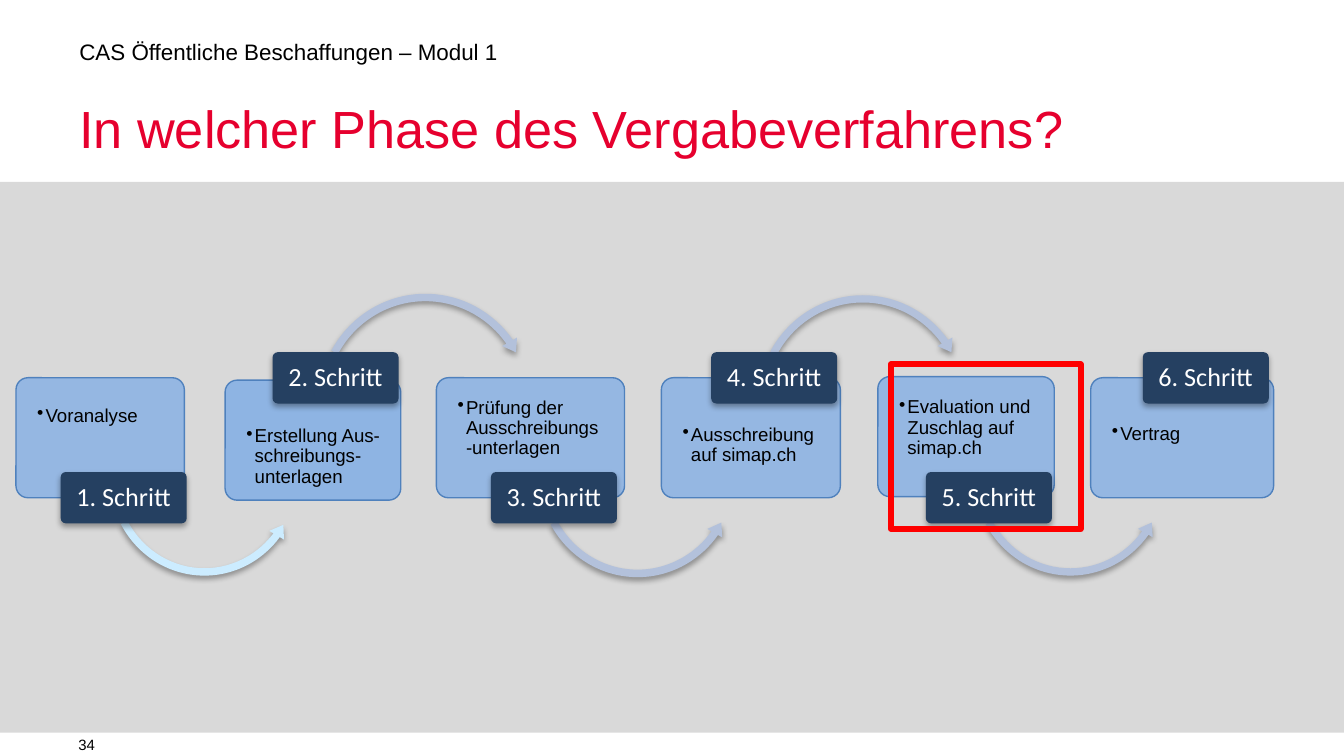
from lxml import etree
from pptx import Presentation
from pptx.dml.color import RGBColor
from pptx.enum.shapes import MSO_SHAPE
from pptx.enum.text import MSO_ANCHOR, PP_ALIGN
from pptx.oxml.ns import qn
from pptx.util import Pt

RECTANGLE = MSO_SHAPE.RECTANGLE
ROUNDED = MSO_SHAPE.ROUNDED_RECTANGLE
ARC_ABOVE = MSO_SHAPE.CIRCULAR_ARROW
ARC_BELOW = MSO_SHAPE.LEFT_CIRCULAR_ARROW
TOP, MIDDLE = MSO_ANCHOR.TOP, MSO_ANCHOR.MIDDLE
LEFT, CENTER = PP_ALIGN.LEFT, PP_ALIGN.CENTER

# Content
HEADER = "CAS Öffentliche Beschaffungen – Modul 1"
TITLE = "In welcher Phase des Vergabeverfahrens?"
PAGE_NUMBER = "34"
# text, box left, top, width, opacity in percent, text inset top, inset right, label left
STEPS = [
    ("Voranalyse", 8.6, 202.4, 90.2, 90, 13.5, 9.5, 32.5),
    ("Erstellung Aus-schreibungs-unterlagen", 120.6, 203.7, 94.1, 100, 23, 6, 146),
    ("Prüfung der Ausschreibungs-unterlagen", 233.8, 202.4, 100.8, 90, 9, 9.5, 263),
    ("Ausschreibung auf simap.ch", 354.3, 202.4, 95.9, 90, 23.5, 9.5, 381),
    ("Evaluation und Zuschlag auf simap.ch", 470.3, 201.8, 94.5, 90, 9.5, 9.5, 496),
    ("Vertrag", 584.3, 202.4, 98, 90, 23, 9.5, 612.2),
]
# left, top, width, height, colour, arc adjustments; one arrow after each step but the last
ARROWS = [
    (56.2, 201.6, 106.6, 109.4, "CCECFF", (0.037, 4.63, 22.918, 90.778, 0.043)),
    (167.8, 154.8, 120.2, 123.1, "B3C1DB", (0.033, 4.064, 194.181, 125.755, 0.038)),
    (285.8, 197.3, 111.6, 114.5, "B3C1DB", (0.036, 4.415, 22.171, 90.245, 0.041)),
    (403.2, 155.5, 118.1, 121, "B3C1DB", (0.033, 4.138, 193.931, 125.579, 0.039)),
    (519.1, 199.4, 108.7, 111.6, "B3C1DB", (0.036, 4.52, 22.276, 90.245, 0.042)),
]
BOX_HEIGHT = 64.3
LABEL_WIDTH, LABEL_HEIGHT = 67.5, 27.5
LABEL_TOPS = (252.9, 188.7)  # below for odd steps, above for even ones


def color(value):
    return RGBColor.from_string(value)


def add_shape(kind, left, top, width, height, fill=None, opacity=100,
              line=None, line_width=0.75, adjustments=(), shadow=False):
    shape = slide.shapes.add_shape(kind, Pt(left), Pt(top), Pt(width), Pt(height))
    for index, value in enumerate(adjustments):
        shape.adjustments[index] = value
    if fill:
        shape.fill.solid()
        shape.fill.fore_color.rgb = color(fill)
        if opacity < 100:
            color_element = shape._element.spPr.find(qn("a:solidFill"))[0]
            etree.SubElement(color_element, qn("a:alpha"), val=str(opacity * 1000))
    else:
        shape.fill.background()
    if line:
        shape.line.color.rgb = color(line)
        shape.line.width = Pt(line_width)
    else:
        shape.line.fill.background()
    shape.shadow.inherit = False
    if shadow:
        effects = shape._element.spPr.find(qn("a:effectLst"))
        outer = etree.SubElement(effects, qn("a:outerShdw"), blurRad="40000",
                                 dist="23000", dir="5400000", rotWithShape="0")
        black = etree.SubElement(outer, qn("a:srgbClr"), val="000000")
        etree.SubElement(black, qn("a:alpha"), val="35000")
    return shape


def write(shape, text, size, font="Arial", ink="000000", align=LEFT, anchor=TOP,
          insets=(0, 0, 0, 0), spacing=0.9, bullet=False):
    frame = shape.text_frame
    frame.word_wrap = True
    frame.vertical_anchor = anchor
    (frame.margin_left, frame.margin_top,
     frame.margin_right, frame.margin_bottom) = map(Pt, insets)
    paragraph = frame.paragraphs[0]
    paragraph.text = text
    paragraph.alignment = align
    paragraph.line_spacing = spacing
    if bullet:
        properties = paragraph._p.get_or_add_pPr()
        properties.set("marL", str(Pt(4.5)))
        properties.set("indent", str(Pt(-4.5)))
        etree.SubElement(properties, qn("a:buChar"), char="•")
    run_font = paragraph.runs[0].font
    run_font.name = font
    run_font.size = Pt(size)
    run_font.color.rgb = color(ink)


def add_text(text, left, top, width, height, **style):
    box = slide.shapes.add_textbox(Pt(left), Pt(top), Pt(width), Pt(height))
    write(box, text, **style)


presentation = Presentation()
presentation.slide_width, presentation.slide_height = Pt(720), Pt(405)
slide = presentation.slides.add_slide(presentation.slide_layouts[6])

# Page frame
add_shape(RECTANGLE, 0, 97.4, 720, 295.2, fill="D9D9D9")
add_text(PAGE_NUMBER, 42, 392.7, 113, 12.2, size=8, anchor=MIDDLE, spacing=1.0)
add_text(HEADER, 42.5, 22.3, 553, 14.4, size=12)
add_text(TITLE, 42.5, 53.3, 553, 32.4, size=28, ink="E6002E", spacing=Pt(32))

# Process steps: box, arrow to the next step, label on top
for index, step in enumerate(STEPS):
    text, left, top, width, opacity, inset_top, inset_right, label_left = step
    box = add_shape(ROUNDED, left, top, width, BOX_HEIGHT, fill="8EB4E3",
                    opacity=opacity, line="4F81BD", adjustments=(0.1,))
    write(box, text, size=10, insets=(9.5, inset_top, inset_right, 0), bullet=True)
    if index < len(ARROWS):
        *place, fill, arc = ARROWS[index]
        kind = ARC_ABOVE if index % 2 else ARC_BELOW
        add_shape(kind, *place, fill=fill, adjustments=arc, shadow=True)
    label = add_shape(ROUNDED, label_left, LABEL_TOPS[index % 2], LABEL_WIDTH,
                      LABEL_HEIGHT, fill="254061", adjustments=(0.1,), shadow=True)
    write(label, f"{index + 1}. Schritt", size=14, font="Calibri", ink="FFFFFF",
          align=CENTER, anchor=MIDDLE, insets=(2, 1.4, 2, 1.4))

# Highlight of the current phase
add_shape(RECTANGLE, 477.2, 195.2, 101.8, 88.2, line="FF0000", line_width=3)

presentation.save("out.pptx")
